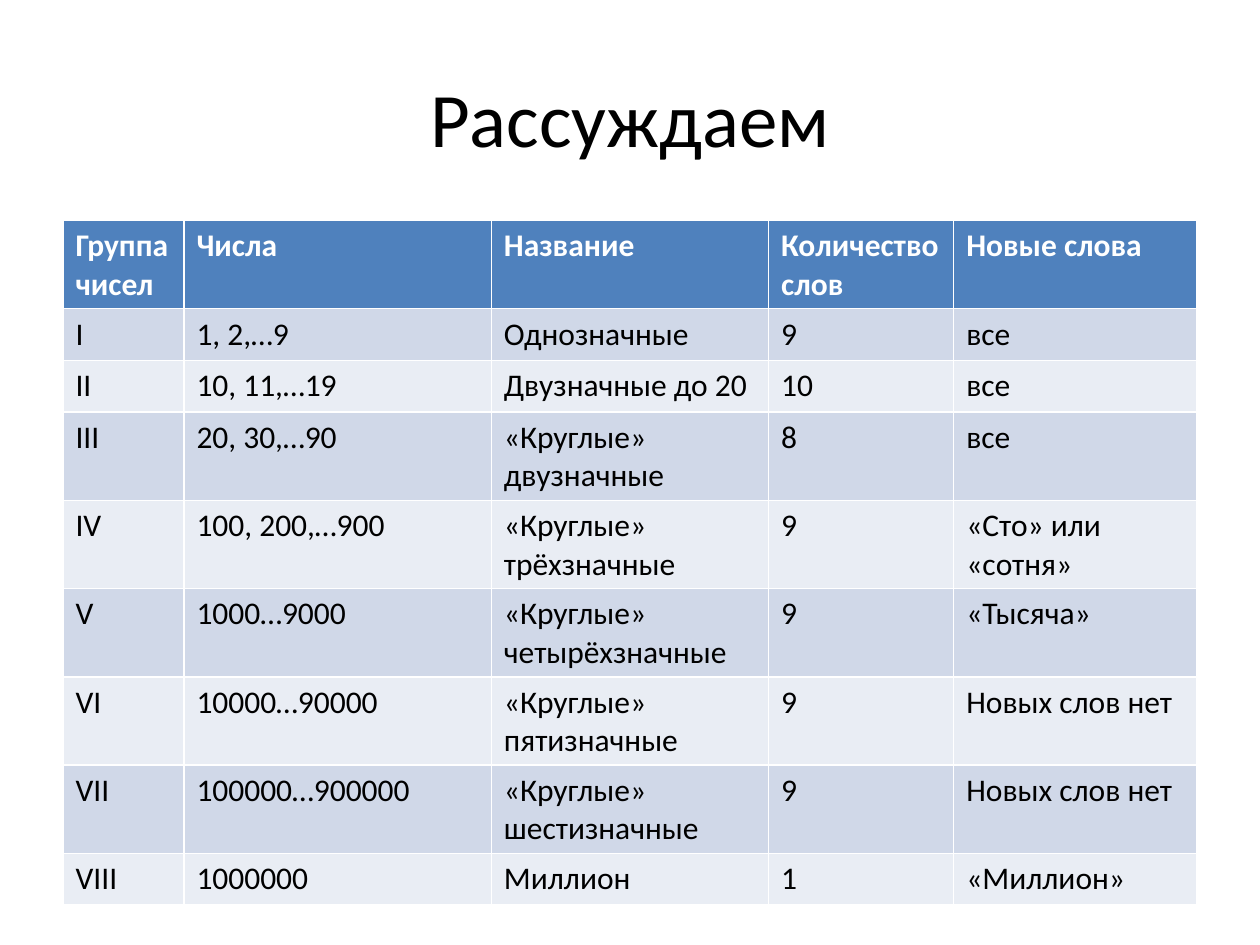
from pptx import Presentation
from pptx import util as u
from pptx.dml.color import RGBColor
from pptx.enum import text

BLACK = RGBColor(0x00, 0x00, 0x00)
WHITE = RGBColor(0xFF, 0xFF, 0xFF)
BLUE = RGBColor(0x4F, 0x81, 0xBD)
BANDS = (RGBColor(0xE9, 0xED, 0xF4), RGBColor(0xD0, 0xD8, 0xE8))
FONT = "Calibri"
WIDTHS = (0.96, 2.44, 2.2, 1.47, 1.93)
ROW = 0.41
ROWS = (
    ("Группа чисел", "Числа", "Название", "Количество слов", "Новые слова"),
    ("I", "1, 2,…9", "Однозначные", "9", "все"),
    ("II", "10, 11,…19", "Двузначные до 20", "10", "все"),
    ("III", "20, 30,…90", "«Круглые» двузначные", "8", "все"),
    ("IV", "100, 200,…900", "«Круглые» трёхзначные", "9", "«Сто» или «сотня»"),
    ("V", "1000…9000", "«Круглые» четырёхзначные", "9", "«Тысяча»"),
    ("VI", "10000…90000", "«Круглые» пятизначные", "9", "Новых слов нет"),
    ("VII", "100000…900000", "«Круглые» шестизначные", "9", "Новых слов нет"),
    ("VIII", "1000000", "Миллион", "1", "«Миллион»"),
)


def style(para, size, color, bold=False):
    """Set the font of a paragraph."""
    font = para.font
    font.name, font.size, font.bold = FONT, u.Pt(size), bold
    font.color.rgb = color


def add_title(slide, words, left, top, width, height):
    """Place the centred title in its box."""
    box = slide.shapes.add_textbox(*map(u.Inches, (left, top, width, height)))
    frame = box.text_frame
    frame.word_wrap = True
    frame.vertical_anchor = text.MSO_ANCHOR.MIDDLE
    para = frame.paragraphs[0]
    para.text = words
    para.alignment = text.PP_ALIGN.CENTER
    style(para, 44, BLACK)


def add_grid(slide, rows, left, top):
    """Place the banded table of number groups."""
    size = (left, top, sum(WIDTHS), ROW * len(rows))
    grid = slide.shapes.add_table(
        len(rows), len(WIDTHS), *map(u.Inches, size)).table
    for col, width in zip(grid.columns, WIDTHS):
        col.width = u.Inches(width)
    for i, row in enumerate(rows):
        grid.rows[i].height = u.Inches(ROW)
        head = i == 0
        for j, words in enumerate(row):
            cell = grid.cell(i, j)
            cell.text = words
            cell.fill.solid()
            cell.fill.fore_color.rgb = BLUE if head else BANDS[i % 2]
            style(cell.text_frame.paragraphs[0], 18,
                  WHITE if head else BLACK, head)


def main():
    """Build and save the slide."""
    deck = Presentation()
    deck.slide_width, deck.slide_height = u.Inches(10), u.Inches(7.5)
    slide = deck.slides.add_slide(deck.slide_layouts[6])
    add_title(slide, "Рассуждаем", 0.5, 0.3, 9, 1.25)
    add_grid(slide, ROWS, 0.5, 1.75)
    deck.save("out.pptx")


if __name__ == "__main__":
    main()
